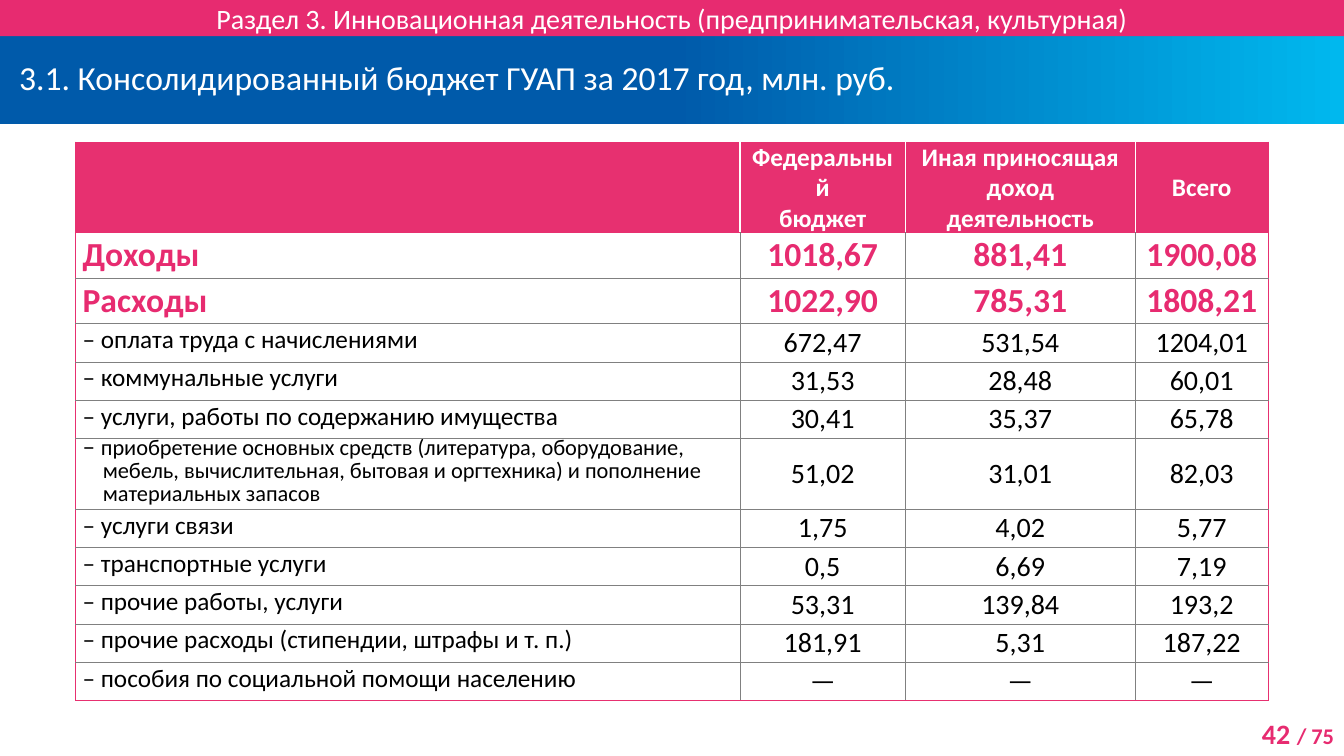
from dataclasses import dataclass
from typing import Any

from lxml.etree import SubElement
from pptx import Presentation
from pptx.dml.color import RGBColor
from pptx.enum.shapes import MSO_SHAPE as Preset
from pptx.enum.text import MSO_ANCHOR as Anchor, PP_ALIGN as Align
from pptx.oxml.ns import qn
from pptx.util import Inches, Pt

COLORS = {
    "pink": "E72B70",
    "table_pink": "E73070",
    "blue": "005AAA",
    "cyan": "00B8EE",
    "grey": "808080",
    "white": "FFFFFF",
    "black": "000000",
}
FONT = "Calibri"


@dataclass
class Run:
    text: str
    size: int
    color: str = "black"
    bold: bool = False


@dataclass
class Banner:
    top: float
    height: float
    text: Run
    fills: tuple[str, ...]
    inset: float
    format: dict[str, Any]


@dataclass
class BudgetRow:
    label: str
    values: tuple[str, str, str]
    height: float = 0.38
    is_total: bool = False
    is_long: bool = False


BANNERS = [
    Banner(0.36, 0.87,
           Run("3.1. Консолидированный бюджет ГУАП за 2017 год, млн. руб.", 24, "white"),
           ("blue", "cyan"), 0.19,
           {"alignment": Align.LEFT, "line_spacing": Pt(24)}),
    Banner(0, 0.36,
           Run("Раздел 3. Инновационная деятельность (предпринимательская, культурная)",
               20, "white"),
           ("pink",), 0, {"alignment": Align.CENTER}),
]

HEADERS = ["", "Федеральный\nбюджет", "Иная приносящая\nдоход деятельность", "Всего"]
HEADER_HEIGHT = 0.68
COLUMN_WIDTHS = [6.59, 1.64, 2.28, 1.32]
ROWS = [
    BudgetRow("Доходы", ("1018,67", "881,41", "1900,08"), 0.45, is_total=True),
    BudgetRow("Расходы", ("1022,90", "785,31", "1808,21"), 0.45, is_total=True),
    BudgetRow("оплата труда с начислениями", ("672,47", "531,54", "1204,01")),
    BudgetRow("коммунальные услуги", ("31,53", "28,48", "60,01")),
    BudgetRow("услуги, работы по содержанию имущества", ("30,41", "35,37", "65,78")),
    BudgetRow("приобретение основных средств (литература, оборудование, мебель, "
              "вычислительная, бытовая и оргтехника) и пополнение материальных запасов",
              ("51,02", "31,01", "82,03"), 0.7, is_long=True),
    BudgetRow("услуги связи", ("1,75", "4,02", "5,77")),
    BudgetRow("транспортные услуги", ("0,5", "6,69", "7,19")),
    BudgetRow("прочие работы, услуги", ("53,31", "139,84", "193,2")),
    BudgetRow("прочие расходы (стипендии, штрафы и т. п.)", ("181,91", "5,31", "187,22")),
    BudgetRow("пособия по социальной помощи населению", ("—", "—", "—")),
]


def rgb(name: str) -> RGBColor:
    return RGBColor.from_string(COLORS[name])


def apply_format(target: Any, values: dict[str, Any]) -> None:
    for name, value in values.items():
        setattr(target, name, value)


def write_runs(paragraph: Any, runs: list[Run], **format_values: Any) -> None:
    apply_format(paragraph, format_values)
    for item in runs:
        for index, line in enumerate(item.text.split("\n")):
            if index:
                paragraph.add_line_break()
            run = paragraph.add_run()
            run.text = line
            apply_format(run.font, {"name": FONT, "size": Pt(item.size), "bold": item.bold})
            run.font.color.rgb = rgb(item.color)


def draw_banner(slide: Any, banner: Banner) -> None:
    shape = slide.shapes.add_shape(Preset.RECTANGLE, 0, Inches(banner.top),
                                   Inches(13.33), Inches(banner.height))
    shape.shadow.inherit = False
    shape.line.fill.background()
    if len(banner.fills) == 1:
        shape.fill.solid()
        shape.fill.fore_color.rgb = rgb(banner.fills[0])
    else:
        # The first colour holds until the middle of the banner
        shape.fill.gradient()
        shape.fill.gradient_angle = 0
        for stop, color, position in zip(shape.fill.gradient_stops, banner.fills, (0.5, 1)):
            stop.color.rgb = rgb(color)
            stop.position = position
    apply_format(shape.text_frame, {
        "word_wrap": True, "vertical_anchor": Anchor.MIDDLE,
        "margin_left": Inches(banner.inset), "margin_right": Inches(banner.inset),
        "margin_top": 0, "margin_bottom": 0,
    })
    write_runs(shape.text_frame.paragraphs[0], [banner.text], **banner.format)


def set_border(cell: Any, side: str, color: str) -> None:
    width = Pt(0.25 if color == "grey" else 1)
    line = SubElement(cell._tc.get_or_add_tcPr(), qn(f"a:ln{side}"), w=str(width))
    fill = SubElement(line, qn("a:solidFill"))
    SubElement(fill, qn("a:srgbClr"), val=COLORS[color])


def style_cell(cell: Any, row: int, column: int) -> None:
    is_header = row == 0
    inner = "white" if is_header else "grey"
    edges = {
        "L": column == 0,
        "R": column == len(HEADERS) - 1,
        "T": row <= 1,
        "B": is_header or row == len(ROWS),
    }
    for side, is_edge in edges.items():
        set_border(cell, side, "table_pink" if is_edge else inner)
    if is_header:
        cell.fill.solid()
        cell.fill.fore_color.rgb = rgb("table_pink")
    else:
        cell.fill.background()
    apply_format(cell, {
        "vertical_anchor": Anchor.MIDDLE,
        "margin_left": Inches(0.07), "margin_right": Inches(0.07),
        "margin_top": 0, "margin_bottom": 0,
    })


def write_label(paragraph: Any, row: BudgetRow) -> None:
    if row.is_total:
        write_runs(paragraph, [Run(row.label, 24, "pink", True)])
    elif row.is_long:
        properties = paragraph._p.get_or_add_pPr()
        properties.set("marL", str(Inches(0.2)))
        properties.set("indent", str(Inches(-0.2)))
        write_runs(paragraph, [Run("– ", 18), Run(row.label, 16)], line_spacing=Pt(16))
    else:
        write_runs(paragraph, [Run(f"– {row.label}", 18)], line_spacing=Pt(18))


def draw_table(slide: Any) -> None:
    heights = [HEADER_HEIGHT] + [row.height for row in ROWS]
    table = slide.shapes.add_table(
        len(heights), len(HEADERS), Inches(0.75), Inches(1.41),
        Inches(sum(COLUMN_WIDTHS)), Inches(sum(heights))).table
    table.horz_banding = False
    for column, width in zip(table.columns, COLUMN_WIDTHS):
        column.width = Inches(width)
    for table_row, height in zip(table.rows, heights):
        table_row.height = Inches(height)
    for row in range(len(heights)):
        for column in range(len(HEADERS)):
            style_cell(table.cell(row, column), row, column)

    # Header and budget figures
    for column, header in enumerate(HEADERS):
        if header:
            write_runs(table.cell(0, column).text_frame.paragraphs[0],
                       [Run(header, 18, "white", True)], alignment=Align.CENTER)
    for index, row in enumerate(ROWS, 1):
        write_label(table.cell(index, 0).text_frame.paragraphs[0], row)
        for column, value in enumerate(row.values, 1):
            figure = Run(value, 24, "pink", True) if row.is_total else Run(value, 20)
            write_runs(table.cell(index, column).text_frame.paragraphs[0],
                       [figure], alignment=Align.CENTER)


def draw_page_number(slide: Any) -> None:
    box = slide.shapes.add_textbox(Inches(12.13), Inches(7.06), Inches(1.2), Inches(0.44))
    box.text_frame.word_wrap = True
    write_runs(box.text_frame.paragraphs[0],
               [Run("42 ", 20, "pink", True), Run("/ 75", 16, "pink", True)],
               alignment=Align.RIGHT)


def main() -> None:
    presentation = Presentation()
    apply_format(presentation, {"slide_width": Inches(13.33), "slide_height": Inches(7.5)})
    slide = presentation.slides.add_slide(presentation.slide_layouts[6])
    draw_page_number(slide)
    for banner in BANNERS:
        draw_banner(slide, banner)
    draw_table(slide)
    presentation.save("out.pptx")


if __name__ == "__main__":
    main()
